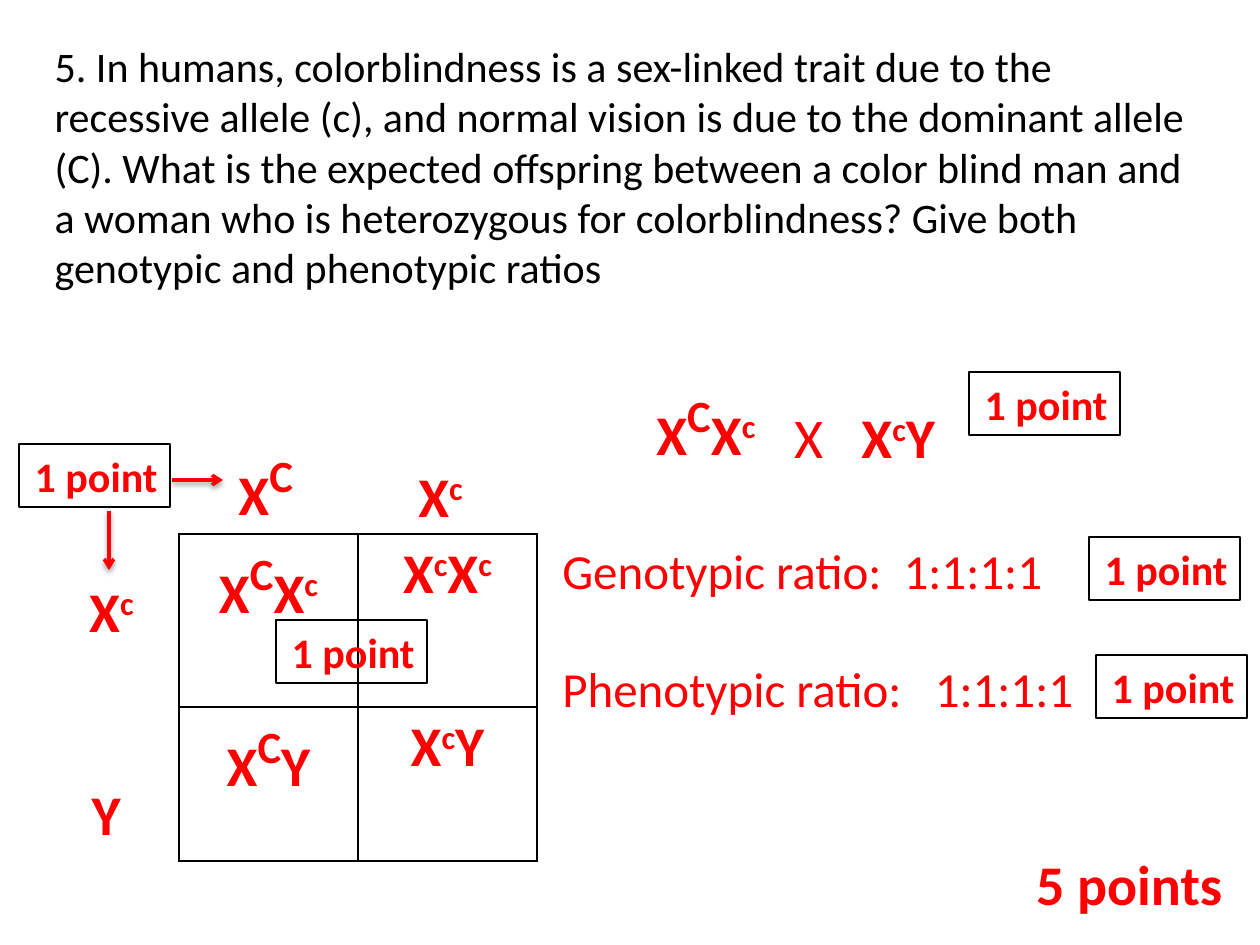
from lxml import etree
from pptx import Presentation, util as u
from pptx.dml.color import RGBColor
from pptx.enum import shapes, text
from pptx.oxml import parse_xml
from pptx.oxml.ns import nsdecls, qn

COLORS = {"ink": "000000", "answer": "FF0000"}
FONT = "Calibri"
LEFT, CENTER, RIGHT = text.PP_ALIGN.LEFT, text.PP_ALIGN.CENTER, text.PP_ALIGN.RIGHT

QUESTION = (
    "5. In humans, colorblindness is a sex-linked trait due to the recessive allele (c), "
    "and normal vision is due to the dominant allele (C). What is the expected offspring "
    "between a color blind man and a woman who is heterozygous for colorblindness? "
    "Give both genotypic and phenotypic ratios"
)
MOTHER, FATHER = ["X", "^C", "X", "^c"], ["X", "^c", "Y"]
EGGS = [["X", "^C"], ["X", "^c"]]
SPERM = [["X", "^c"], ["Y"]]
OFFSPRING = [[MOTHER, ["X", "^c", "X", "^c"]], [["X", "^C", "Y"], FATHER]]


def px(n):
    return u.Emu(round(n * 914400 / 126))


def rgb(name):
    return RGBColor.from_string(COLORS[name])


def add_run(paragraph, words, size, bold=False, color="answer"):
    run = paragraph.add_run()
    run.text = words
    style = {"name": FONT, "size": u.Pt(size), "bold": bold}
    for key, value in style.items():
        setattr(run.font, key, value)
    run.font.color.rgb = rgb(color)
    return run


def write_alleles(paragraph, alleles, bold=True):
    for allele in alleles:
        raised = allele.startswith("^")
        run = add_run(paragraph, allele.lstrip("^"), 44 if allele == "^C" else 32, bold)
        if raised:
            run.font._element.set("baseline", "30000")


def set_frame(frame, align=LEFT, anchor=text.MSO_ANCHOR.TOP):
    settings = {"word_wrap": True, "auto_size": text.MSO_AUTO_SIZE.NONE, "vertical_anchor": anchor}
    for key, value in settings.items():
        setattr(frame, key, value)
    paragraph = frame.paragraphs[0]
    paragraph.alignment = align
    return paragraph


def add_label(slide, box, align=LEFT):
    return set_frame(slide.shapes.add_textbox(*map(px, box)).text_frame, align)


def add_question(slide, box):
    title = slide.shapes.title
    for side, length in zip(("left", "top", "width", "height"), box):
        setattr(title, side, px(length))
    add_run(set_frame(title.text_frame), QUESTION, 24, color="ink")


def add_cross(slide, box):
    left, top, width, height = box
    parts = [(MOTHER, 0, 0, 150, True), (["X"], 138, 24, 60, False), (FATHER, 205, 24, 110, True)]
    for alleles, dx, dy, part_width, bold in parts:
        label = add_label(slide, (left + dx, top + dy, part_width, height - dy))
        write_alleles(label, alleles, bold)


def border_cell(cell):
    props = cell._tc.get_or_add_tcPr()
    for position, side in enumerate(("lnL", "lnR", "lnT", "lnB")):
        props.insert(position, parse_xml(
            f'<a:{side} w="12700" {nsdecls("a")}><a:solidFill>'
            f'<a:srgbClr val="{COLORS["ink"]}"/></a:solidFill></a:{side}>'))


def add_punnett_square(slide, box):
    left, top, width, height = box
    grid = slide.shapes.add_table(2, 2, *map(px, box)).table
    grid.first_row = grid.horz_banding = False
    for row, row_height in zip(grid.rows, (173, height - 173)):
        row.height = px(row_height)
    for r, line in enumerate(OFFSPRING):
        for c, alleles in enumerate(line):
            cell = grid.cell(r, c)
            cell.fill.background()
            border_cell(cell)
            paragraph = cell.text_frame.paragraphs[0]
            paragraph.alignment = CENTER
            write_alleles(paragraph, alleles)

    for alleles, dx, dy in zip(EGGS, (47, 227), (-102, -79)):
        write_alleles(add_label(slide, (left + dx, top + dy, 100, 81)), alleles)
    for alleles, edge, dy in zip(SPERM, (-33, -46), (36, 239)):
        label = add_label(slide, (left + edge - 104, top + dy, 104, 81), RIGHT)
        write_alleles(label, alleles)


def add_ratios(slide, box):
    genotypic = add_label(slide, box)
    add_run(genotypic, "Genotypic ratio:  1:1:1:1", 28)
    genotypic.space_after = u.Pt(34)
    phenotypic = genotypic._parent.add_paragraph()
    add_run(phenotypic, "Phenotypic ratio:   1:1:1:1", 28)


def add_total(slide, box):
    add_run(add_label(slide, box, RIGHT), "5 points", 32, bold=True)


def add_point_badge(slide, left, top):
    badge = slide.shapes.add_shape(shapes.MSO_SHAPE.RECTANGLE, px(left), px(top), px(151), px(63))
    badge.shadow.inherit = False
    badge.fill.background()
    badge.line.color.rgb = rgb("ink")
    badge.line.width = u.Pt(0.75)
    add_run(set_frame(badge.text_frame, RIGHT), "1 point", 24, bold=True)


def add_arrow(slide, *ends):
    arrow = slide.shapes.add_connector(shapes.MSO_CONNECTOR.STRAIGHT, *map(px, ends))
    arrow.line.color.rgb = rgb("answer")
    arrow.line.width = u.Pt(2)
    etree.SubElement(arrow.line._get_or_add_ln(), qn("a:tailEnd"), type="arrow")
    arrow._element.spPr.append(parse_xml(
        f'<a:effectLst {nsdecls("a")}>'
        '<a:outerShdw blurRad="40000" dist="20000" dir="5400000" rotWithShape="0">'
        f'<a:srgbClr val="{COLORS["ink"]}"><a:alpha val="38000"/></a:srgbClr>'
        '</a:outerShdw></a:effectLst>'))


def main():
    deck = Presentation()
    deck.slide_width, deck.slide_height = px(1260), px(945)
    slide = deck.slides.add_slide(deck.slide_layouts[5])
    add_question(slide, (42, 34, 1174, 326))
    add_total(slide, (993, 843, 242, 81))
    add_punnett_square(slide, (179, 534, 358, 327))
    add_cross(slide, (644, 372, 315, 105))
    add_ratios(slide, (550, 534, 632, 190))
    for corner in ((969, 372), (19, 444), (1096, 655), (1089, 537), (276, 620)):
        add_point_badge(slide, *corner)
    add_arrow(slide, 172, 480, 223, 480)
    add_arrow(slide, 109, 511, 109, 570)
    deck.save("out.pptx")


if __name__ == "__main__":
    main()
